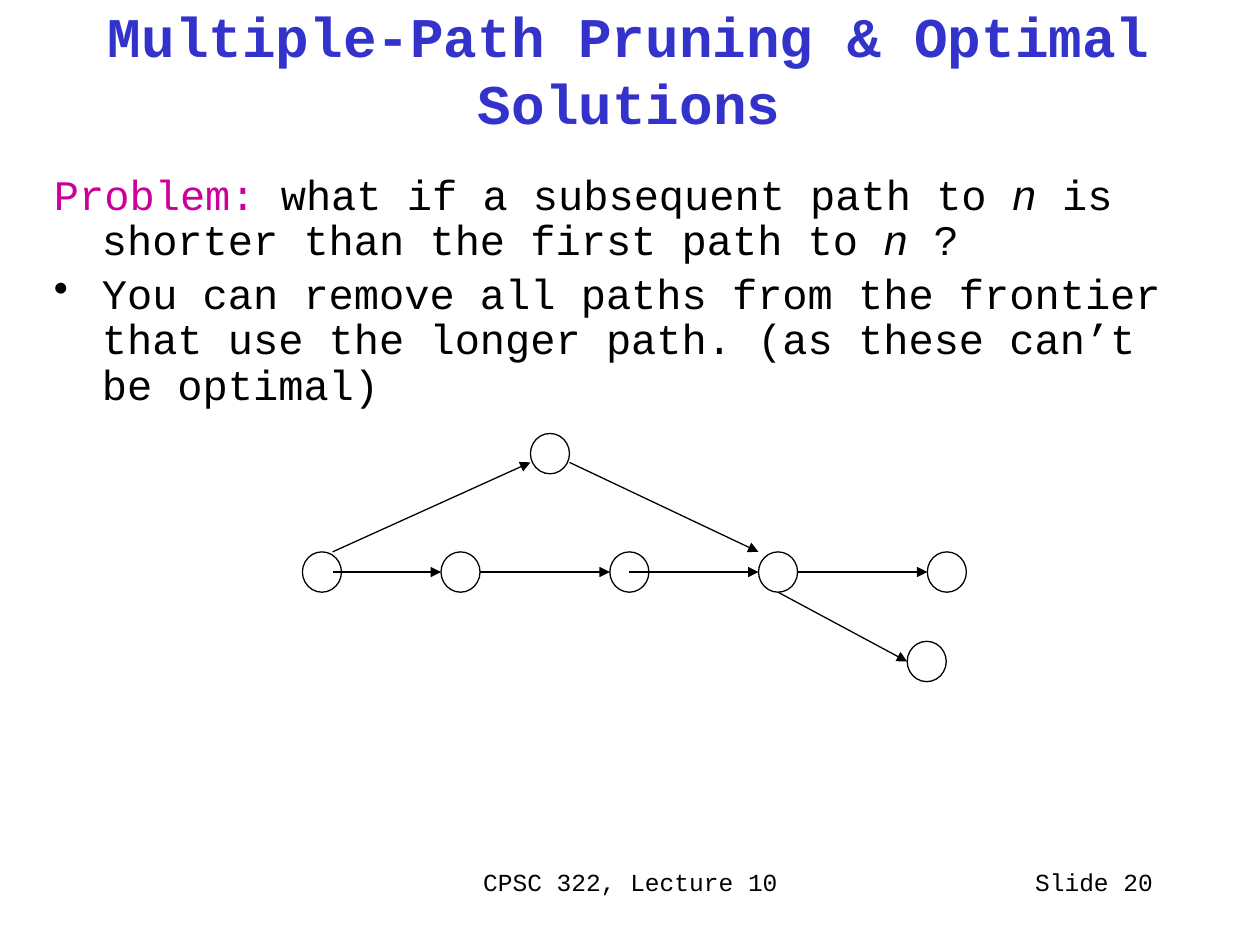
from lxml import etree
from pptx import Presentation
from pptx.dml.color import RGBColor
from pptx.enum import shapes, text
from pptx.oxml.ns import qn
from pptx.util import Inches, Pt

FONT = "Courier New"
BLACK, BLUE, PINK = "000000", "3333CC", "CC0099"
DX, DY = 0.31, 0.32  # node size


def paint(part, color):
    part.rgb = RGBColor.from_string(color)


def style(par, size, color=BLACK, bold=False):
    font = par.font
    font.name, font.size, font.bold = FONT, Pt(size), bold
    paint(font.color, color)


def add_box(slide, box, anchor=text.MSO_ANCHOR.TOP):
    frame = slide.shapes.add_textbox(*map(Inches, box)).text_frame
    frame.word_wrap = True
    frame.vertical_anchor = anchor
    return frame


def add_label(slide, box, words, size, align, color=BLACK, bold=False,
              anchor=text.MSO_ANCHOR.TOP):
    par = add_box(slide, box, anchor).paragraphs[0]
    par.text, par.alignment = words, align
    style(par, size, color, bold)


def add_body(slide, box):
    frame = add_box(slide, box)
    items = [
        (False, [("Problem:", PINK, False),
                 (" what if a subsequent path to ", BLACK, False),
                 ("n", BLACK, True),
                 (" is shorter than the first path to ", BLACK, False),
                 ("n ", BLACK, True),
                 ("?", BLACK, False)]),
        (True, [("You can remove all paths from the frontier that use the "
                 "longer path. (as these can’t be optimal)", BLACK, False)]),
    ]
    for i, (dot, runs) in enumerate(items):
        par = frame.add_paragraph() if i else frame.paragraphs[0]
        # Hanging indent, with a bullet where one shows
        props = par._p.get_or_add_pPr()
        props.set("marL", str(Inches(0.38)))
        props.set("indent", str(-Inches(0.38)))
        if dot:
            etree.SubElement(props, qn("a:buChar")).set("char", "•")
        par.line_spacing = 0.9
        if i:
            par.space_before = Pt(5)
        style(par, 24)
        for words, color, slant in runs:
            run = par.add_run()
            run.text = words
            run.font.italic = slant
            paint(run.font.color, color)


def add_node(slide, x, y):
    node = slide.shapes.add_shape(shapes.MSO_SHAPE.OVAL,
                                  *map(Inches, (x, y, DX, DY)))
    node.shadow.inherit = False
    node.fill.background()
    paint(node.line.color, BLACK)
    node.line.width = Pt(0.75)


def add_arrow(slide, start, end):
    arrow = slide.shapes.add_connector(shapes.MSO_CONNECTOR.STRAIGHT,
                                       *map(Inches, start + end))
    paint(arrow.line.color, BLACK)
    arrow.line.width = Pt(0.75)
    tip = etree.SubElement(arrow.line._get_or_add_ln(), qn("a:tailEnd"))
    tip.set("type", "triangle")
    etree.SubElement(arrow._element.spPr, qn("a:effectLst"))


def add_graph(slide, left, top):
    # Nodes: the long path in a row, the short cut above, a branch below
    row = top + 0.94
    mid = row + DY / 2
    cols = [left + step for step in (0, 1.1, 2.44, 3.62, 4.96)]
    peak, leaf = (left + 1.81, top), (left + 4.8, top + 1.65)
    for x, y in [(x, row) for x in cols] + [peak, leaf]:
        add_node(slide, x, y)

    # Arrows along the row; two of them start inside their node
    offs = (0.24, DX, DX / 2, DX)
    for x, off, end in zip(cols, offs, cols[1:]):
        add_arrow(slide, (x + off, mid), (end, mid))

    # Slanted arrows
    low = top + 0.23
    add_arrow(slide, (left + 0.24, row), (peak[0], low))
    add_arrow(slide, (peak[0] + DX, low), (cols[3], row))
    add_arrow(slide, (cols[3] + DX / 2, row + DY), (leaf[0], leaf[1] + DY / 2))


def main():
    deck = Presentation()
    deck.slide_width, deck.slide_height = Inches(10), Inches(7.5)
    slide = deck.slides.add_slide(deck.slide_layouts[6])
    align = text.PP_ALIGN

    # Footer
    add_label(slide, (3.42, 6.83, 3.17, 0.5), "CPSC 322, Lecture 10", 14,
              align.CENTER)
    add_label(slide, (7.17, 6.83, 2.08, 0.5), "Slide 20", 14, align.RIGHT)

    # Title, body and graph
    add_label(slide, (0.33, 0.17, 9.33, 0.75),
              "Multiple-Path Pruning & Optimal Solutions", 32, align.CENTER,
              BLUE, True, text.MSO_ANCHOR.MIDDLE)
    add_body(slide, (0.33, 1.33, 9.25, 2.02))
    add_graph(slide, 2.4, 3.44)
    deck.save("out.pptx")


if __name__ == "__main__":
    main()
